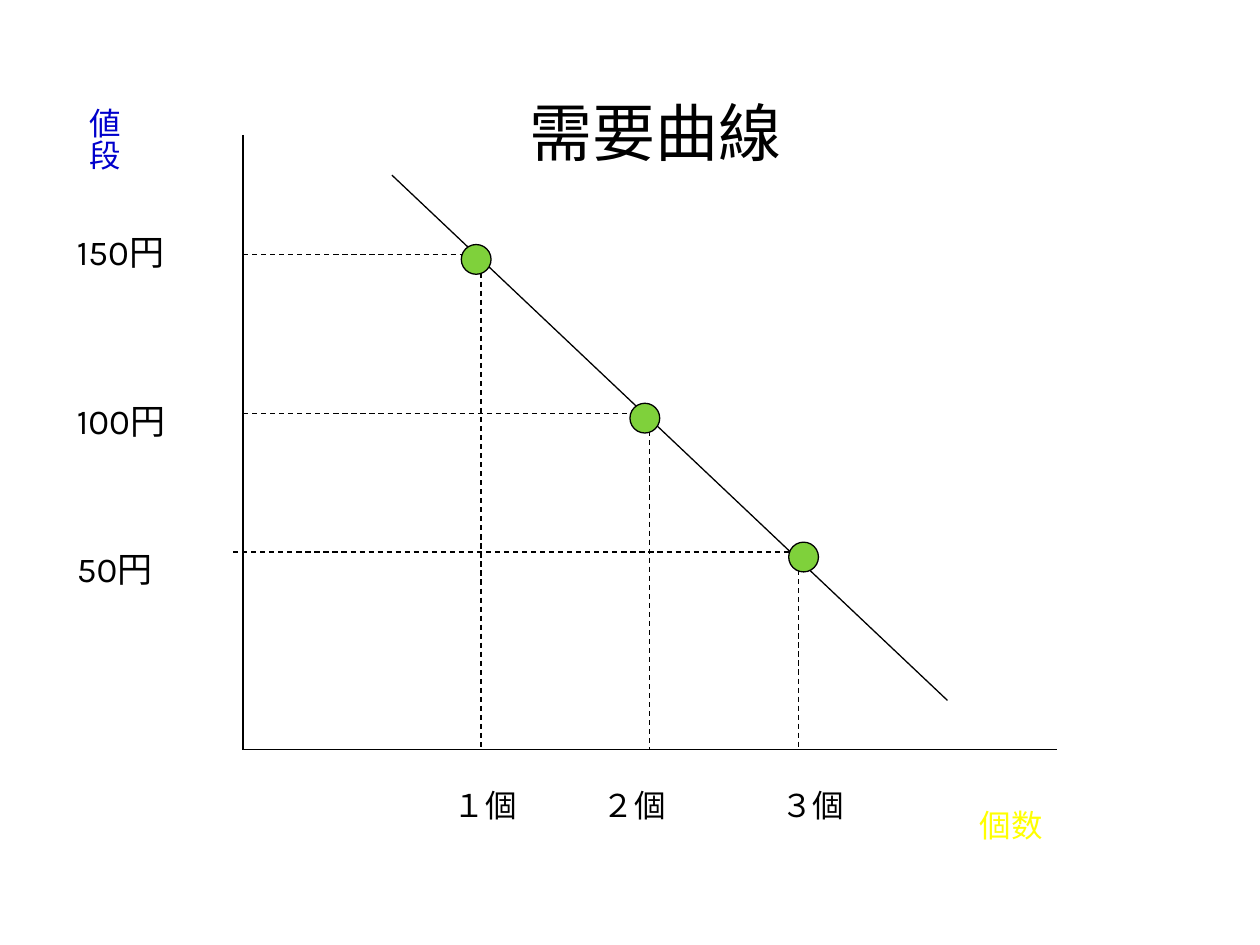
from dataclasses import dataclass

from lxml import etree
from pptx import Presentation
from pptx.dml.color import RGBColor
from pptx.enum.dml import MSO_LINE
from pptx.enum.shapes import MSO_CONNECTOR, MSO_SHAPE
from pptx.enum.text import MSO_ANCHOR, MSO_AUTO_SIZE, PP_ALIGN
from pptx.oxml.ns import qn
from pptx.util import Cm, Pt

STRAIGHT = MSO_CONNECTOR.STRAIGHT
OVAL = MSO_SHAPE.OVAL
DASH = MSO_LINE.DASH
TOP = MSO_ANCHOR.TOP
CENTER = PP_ALIGN.CENTER
GROW = MSO_AUTO_SIZE.SHAPE_TO_FIT_TEXT
TITLE_ONLY = 5


@dataclass(frozen=True)
class Theme:
    font: str = "Karla"
    ink: str = "000000"
    price: str = "0000CC"
    quantity: str = "FFFF00"
    dot: str = "7FD13B"
    title_size: int = 36
    price_size: int = 20
    label_size: int = 18
    line_width: float = 0.75


@dataclass(frozen=True)
class DemandPoint:
    """One point of the curve with its guide lines and axis labels, in cm."""
    price: str
    quantity: str
    x: float
    y: float
    dot_left: float
    guide_start: float
    guide_end: float
    price_box: tuple
    quantity_box: tuple


class SlideBuilder:
    def __init__(self, slide, theme):
        self.slide = slide
        self.theme = theme

    def style_text(self, s, text, size, color):
        tf = s.text_frame
        tf.text = text
        tf.word_wrap = True
        tf.vertical_anchor = TOP
        font = tf.paragraphs[0].runs[0].font
        font.name = self.theme.font
        font.size = Pt(size)
        font.color.rgb = RGBColor.from_string(color)
        return tf

    def title(self, text, left, top, width, height):
        s = self.slide.shapes.title
        s.left, s.top, s.width, s.height = map(Cm, (left, top, width, height))
        tf = self.style_text(s, text, self.theme.title_size, self.theme.ink)
        tf.paragraphs[0].alignment = CENTER

    def label(self, text, box, size, color, vertical=False):
        s = self.slide.shapes.add_textbox(*map(Cm, box))
        tf = self.style_text(s, text, size, color)
        tf.auto_size = GROW
        if vertical:
            s.element.txBody.find(qn("a:bodyPr")).set("vert", "eaVert")

    def line(self, x1, y1, x2, y2, dashed=False):
        s = self.slide.shapes.add_connector(STRAIGHT, *map(Cm, (x1, y1, x2, y2)))
        s.line.color.rgb = RGBColor.from_string(self.theme.ink)
        s.line.width = Pt(self.theme.line_width)
        if dashed:
            s.line.dash_style = DASH
        etree.SubElement(s.element.spPr, qn("a:effectLst"))

    def dot(self, left, top, size):
        s = self.slide.shapes.add_shape(OVAL, *map(Cm, (left, top, size, size)))
        s.shadow.inherit = False
        s.fill.solid()
        s.fill.fore_color.rgb = RGBColor.from_string(self.theme.dot)
        s.line.color.rgb = RGBColor.from_string(self.theme.ink)
        s.line.width = Pt(self.theme.line_width)


AXIS_X, AXIS_Y = 4.9, 15.11
DOT_SIZE, DOT_RISE = 0.6, 0.2
PRICE_LEFT, PRICE_HEIGHT = 1.3, 1.1
QUANTITY_TOP, LABEL_HEIGHT = 15.72, 1.02

# Price boxes hold (top, width), quantity boxes hold (left, width).
POINTS = [
    DemandPoint("150円", "１個", 9.7, 5.13, 9.3, AXIS_X, 9.5, (4.52, 3), (8.9, 2.6)),
    DemandPoint("100円", "２個", 13.1, 8.33, 12.7, AXIS_X, 13.1, (7.92, 3), (11.9, 3)),
    DemandPoint("50円", "３個", 16.1, 11.13, 15.9, 4.7, 15.9, (10.92, 3.4), (15.5, 2.6)),
]


def main():
    prs = Presentation()
    prs.slide_width, prs.slide_height = Cm(25.4), Cm(19.05)
    theme = Theme()
    b = SlideBuilder(prs.slides.add_slide(prs.slide_layouts[TITLE_ONLY]), theme)

    b.title("需要曲線", 9.3, 1.75, 7.82, 1.78)
    b.line(AXIS_X, 2.72, AXIS_X, AXIS_Y)
    b.line(AXIS_X, AXIS_Y, 21.3, AXIS_Y)
    b.label("値段", (1.3, 1.93, 1.3, 4.4), theme.label_size, theme.price, vertical=True)
    b.label("個数", (19.5, 16.13, 4.4, LABEL_HEIGHT), theme.label_size, theme.quantity)
    b.line(7.9, 3.53, 19.1, 14.12)

    for p in POINTS:
        b.line(p.guide_start, p.y, p.guide_end, p.y, dashed=True)
        b.line(p.x, p.y, p.x, AXIS_Y, dashed=True)
        top, width = p.price_box
        b.label(p.price, (PRICE_LEFT, top, width, PRICE_HEIGHT), theme.price_size, theme.ink)
        left, width = p.quantity_box
        b.label(p.quantity, (left, QUANTITY_TOP, width, LABEL_HEIGHT), theme.label_size, theme.ink)
        b.dot(p.dot_left, p.y - DOT_RISE, DOT_SIZE)

    prs.save("out.pptx")


if __name__ == "__main__":
    main()
